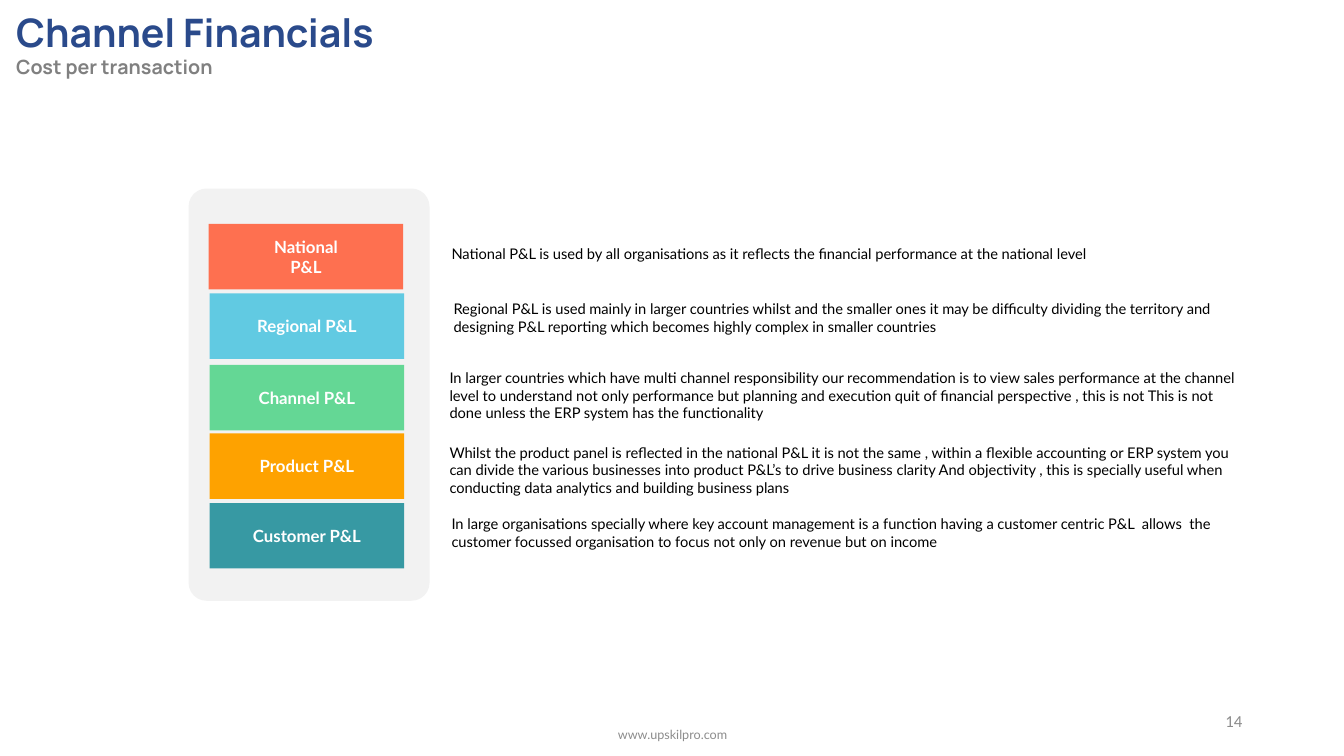
"""Build the Channel Financials slide with its five P&L levels."""
from pptx import Presentation
from pptx.dml.color import RGBColor
from pptx.enum.shapes import MSO_SHAPE
from pptx.enum.text import MSO_ANCHOR, MSO_AUTO_SIZE, PP_ALIGN
from pptx.util import Inches, Pt

NAVY = RGBColor(0x2A, 0x4A, 0x8B)
SUBTITLE_GREY = RGBColor(0x80, 0x80, 0x80)
FOOTER_GREY = RGBColor(0x8C, 0x8C, 0x8C)
PANEL_GREY = RGBColor(0xF2, 0xF2, 0xF2)
CORAL = RGBColor(0xFE, 0x70, 0x50)
SKY = RGBColor(0x61, 0xCA, 0xE2)
GREEN = RGBColor(0x64, 0xD7, 0x95)
ORANGE = RGBColor(0xFE, 0xA2, 0x00)
TEAL = RGBColor(0x37, 0x99, 0xA3)
BLACK = RGBColor(0x00, 0x00, 0x00)
WHITE = RGBColor(0xFF, 0xFF, 0xFF)

LEVELS = [
    ("National\nP&L", CORAL, 2.07, 2.22, 4.38, 2.38, 0.29,
     "National P&L is used by all organisations as it reflects the financial "
     "performance at the national level"),
    ("Regional P&L", SKY, 2.08, 2.91, 4.4, 2.93, 0.47,
     "Regional P&L is used mainly in larger countries whilst and the smaller ones "
     "it may be difficulty dividing the territory and designing P&L reporting "
     "which becomes highly complex in smaller countries"),
    ("Channel P&L", GREEN, 2.08, 3.62, 4.36, 3.61, 0.63,
     "In larger countries which have multi channel responsibility our "
     "recommendation is to view sales performance at the channel level to "
     "understand not only performance but planning and execution quit of financial "
     "perspective , this is not This is not done unless the ERP system has the "
     "functionality"),
    ("Product P&L", ORANGE, 2.08, 4.3, 4.36, 4.35, 0.63,
     "Whilst the product panel is reflected in the national P&L it is not the same , "
     "within a flexible accounting or ERP system you can divide the various "
     "businesses into product P&L’s to drive business clarity And objectivity , this "
     "is specially useful when conducting data analytics and building business plans"),
    ("Customer P&L", TEAL, 2.08, 4.99, 4.38, 5.06, 0.47,
     "In large organisations specially where key account management is a function "
     "having a customer centric P&L  allows  the customer focussed organisation to "
     "focus not only on revenue but on income"),
]


def write_text(shape, text, size, color, font="Lato", bold=False,
               align=PP_ALIGN.LEFT, anchor=MSO_ANCHOR.MIDDLE):
    text_frame = shape.text_frame
    text_frame.text = text
    text_frame.word_wrap = True
    text_frame.vertical_anchor = anchor
    for paragraph in text_frame.paragraphs:
        paragraph.alignment = align
        for run in paragraph.runs:
            run.font.name = font
            run.font.size = Pt(size)
            run.font.bold = bold
            run.font.color.rgb = color


def add_block(slide, preset, left, top, width, height, color):
    shape = slide.shapes.add_shape(
        preset, Inches(left), Inches(top), Inches(width), Inches(height))
    shape.shadow.inherit = False
    shape.fill.solid()
    shape.fill.fore_color.rgb = color
    shape.line.fill.background()
    return shape


presentation = Presentation()
presentation.slide_width = Inches(13.33)
presentation.slide_height = Inches(7.5)
slide = presentation.slides.add_slide(presentation.slide_layouts[5])

title = slide.shapes.title
title.left, title.top = Inches(0.06), Inches(0.03)
title.width, title.height = Inches(8.61), Inches(0.88)
write_text(title, "Channel Financials\nCost per transaction", 28, NAVY,
           font="Manrope", bold=True, anchor=MSO_ANCHOR.TOP)
title.text_frame.auto_size = MSO_AUTO_SIZE.NONE
subtitle_font = title.text_frame.paragraphs[1].runs[0].font
subtitle_font.size = Pt(14)
subtitle_font.color.rgb = SUBTITLE_GREY

panel = add_block(slide, MSO_SHAPE.ROUNDED_RECTANGLE, 1.87, 1.87, 2.39, 4.09, PANEL_GREY)
panel.adjustments[0] = 0.075

for label, color, left, top, text_left, text_top, text_height, description in LEVELS:
    block = add_block(slide, MSO_SHAPE.RECTANGLE, left, top, 1.93, 0.65, color)
    write_text(block, label, 12, WHITE, bold=True, align=PP_ALIGN.CENTER)
    description_box = slide.shapes.add_textbox(
        Inches(text_left), Inches(text_top), Inches(8.01), Inches(text_height))
    write_text(description_box, description, 10.5, BLACK, anchor=MSO_ANCHOR.TOP)

website = slide.shapes.add_textbox(Inches(4.42), Inches(7.09), Inches(4.5), Inches(0.4))
write_text(website, "www.upskilpro.com", 9, FOOTER_GREY, align=PP_ALIGN.CENTER)

page_number = slide.shapes.add_textbox(Inches(9.42), Inches(6.95), Inches(3), Inches(0.4))
write_text(page_number, "14", 12, FOOTER_GREY, font="Calibri", align=PP_ALIGN.RIGHT)

presentation.save("out.pptx")
